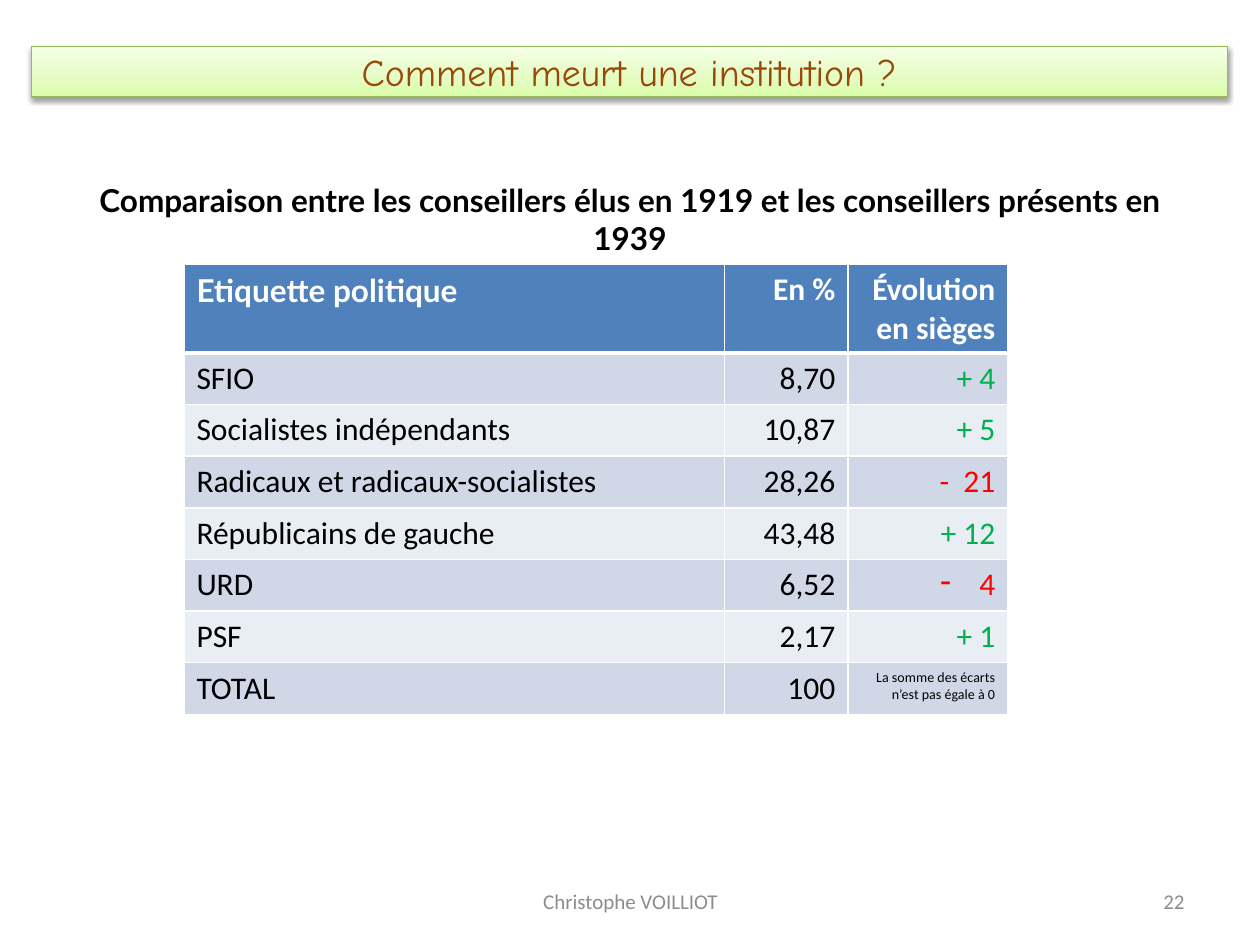
from lxml.etree import SubElement
from pptx import Presentation
from pptx.dml.color import RGBColor
from pptx.enum.text import MSO_ANCHOR, PP_ALIGN
from pptx.oxml import parse_xml
from pptx.oxml.ns import nsdecls, qn
from pptx.util import Inches, Pt

TITLE = "Comment meurt une institution ?"
HEADING = "Comparaison entre les conseillers élus en 1919 et les conseillers présents en 1939"
AUTHOR = "Christophe VOILLIOT"
PAGE_NUMBER = "22"
HEADERS = ("Etiquette politique", "En %", "Évolution en sièges")
RESULTS = [
    ("SFIO", "8,70", "+ 4"),
    ("Socialistes indépendants", "10,87", "+ 5"),
    ("Radicaux et radicaux-socialistes", "28,26", "-  21"),
    ("Républicains de gauche", "43,48", "+ 12"),
    ("URD", "6,52", "4"),
    ("PSF", "2,17", "+ 1"),
    ("TOTAL", "100", "La somme des écarts n’est pas égale à 0"),
]
CHANGE_COLORS = ["00B050", "00B050", "FF0000", "00B050", "FF0000", "00B050", "000000"]
BULLETED_ROW = 5
COLUMN_WIDTHS = (4.29, 0.98, 1.27)
HEADER_HEIGHT, ROW_HEIGHT = 0.69, 0.41
HEADER_FILL, BAND_FILLS = "4F81BD", ("E9EDF4", "D0D8E8")
TITLE_STOPS = [(0, "DAFDA7"), (35, "E4FCC2"), (100, "F5FFE7")]


def rgb(value):
    """Turn a hex string into a colour."""
    return RGBColor.from_string(value)


def write(frame, text, size=18, font="Calibri", color="000000", bold=False,
          align=PP_ALIGN.LEFT, anchor=None):
    """Put one formatted paragraph in a text frame and return it."""
    frame.word_wrap = True
    if anchor is not None:
        frame.vertical_anchor = anchor
    para = frame.paragraphs[0]
    para.alignment = align
    span = para.add_run()
    span.text = text
    span.font.size, span.font.name, span.font.bold = Pt(size), font, bold
    span.font.color.rgb = rgb(color)
    return para


def place(shape, left, top, width, height):
    """Move and size a shape in inches."""
    shape.left, shape.top = Inches(left), Inches(top)
    shape.width, shape.height = Inches(width), Inches(height)


def add_text(page, bounds, text, **style):
    """Add a text box and return its paragraph."""
    box = page.shapes.add_textbox(*map(Inches, bounds))
    return write(box.text_frame, text, **style)


def style_title(title):
    """Give the title its gradient, outline and shadow."""
    stops = "".join(f'<a:gs pos="{position * 1000}"><a:srgbClr val="{color}"/></a:gs>'
                    for position, color in TITLE_STOPS)
    properties = title._element.spPr
    properties.append(parse_xml(
        f'<a:gradFill {nsdecls("a")} rotWithShape="1"><a:gsLst>{stops}</a:gsLst>'
        '<a:lin ang="16200000" scaled="0"/></a:gradFill>'))
    title.line.color.rgb = rgb("98B955")
    title.line.width = Pt(0.75)
    properties.append(parse_xml(
        f'<a:effectLst {nsdecls("a")}><a:outerShdw blurRad="{Pt(3.1)}" dist="{Pt(1.6)}" '
        'dir="5400000" rotWithShape="0"><a:srgbClr val="000000"><a:alpha val="38000"/>'
        '</a:srgbClr></a:outerShdw></a:effectLst>'))


def style_cell(cell, fill, top=1, bottom=1):
    """Set the fill and the white borders of a cell."""
    properties = cell._tc.get_or_add_tcPr()
    for side, width in (("L", 1), ("R", 1), ("T", top), ("B", bottom)):
        line = SubElement(properties, qn(f"a:ln{side}"), w=str(Pt(width)))
        SubElement(SubElement(line, qn("a:solidFill")), qn("a:srgbClr"), val="FFFFFF")
    cell.fill.solid()
    cell.fill.fore_color.rgb = rgb(fill)


def add_dash(para):
    """Give a paragraph a hanging dash bullet."""
    properties = para._p.get_or_add_pPr()
    properties.set("marL", str(Inches(0.31)))
    properties.set("indent", str(Inches(-0.31)))
    SubElement(properties, qn("a:buChar"), char="-")


def add_results(page):
    """Add the table of results."""
    rows = [HEADERS, *RESULTS]
    height = HEADER_HEIGHT + ROW_HEIGHT * len(RESULTS)
    table = page.shapes.add_table(
        len(rows), len(HEADERS), Inches(1.46), Inches(2.1),
        Inches(sum(COLUMN_WIDTHS)), Inches(height)).table
    for column, width in zip(table.columns, COLUMN_WIDTHS):
        column.width = Inches(width)
    for r, values in enumerate(rows):
        header = r == 0
        table.rows[r].height = Inches(HEADER_HEIGHT if header else ROW_HEIGHT)
        for c, text in enumerate(values):
            cell = table.cell(r, c)
            style_cell(cell, HEADER_FILL if header else BAND_FILLS[r % 2],
                       top=3 if r == 1 else 1, bottom=3 if header else 1)
            color = "FFFFFF" if header else CHANGE_COLORS[r - 1] if c == 2 else "000000"
            para = write(cell.text_frame, text, color=color, bold=header,
                         size=8 if r == len(RESULTS) and c == 2 else 18,
                         font="Lato" if header and c == 0 else "Calibri",
                         align=PP_ALIGN.RIGHT if c else PP_ALIGN.LEFT)
            if r == BULLETED_ROW and c == 2:
                add_dash(para)


def main():
    """Build the slide and save it."""
    deck = Presentation()
    deck.slide_width, deck.slide_height = Inches(10), Inches(7.5)
    page = deck.slides.add_slide(deck.slide_layouts[5])
    title = page.shapes.title
    place(title, 0.25, 0.37, 9.49, 0.4)
    style_title(title)
    write(title.text_frame, TITLE, size=21.6, font="Comic Neue", color="984807",
          align=PP_ALIGN.CENTER, anchor=MSO_ANCHOR.MIDDLE)
    add_text(page, (0.5, 1.39, 9, 4.95), HEADING, font="Lato", bold=True,
             align=PP_ALIGN.CENTER)
    footer = dict(size=12, color="8C8C8C", anchor=MSO_ANCHOR.MIDDLE)
    add_text(page, (3.42, 6.95, 3.17, 0.4), AUTHOR, align=PP_ALIGN.CENTER, **footer)
    add_text(page, (7.17, 6.95, 2.33, 0.4), PAGE_NUMBER, align=PP_ALIGN.RIGHT, **footer)
    add_results(page)
    deck.save("out.pptx")


if __name__ == "__main__":
    main()
